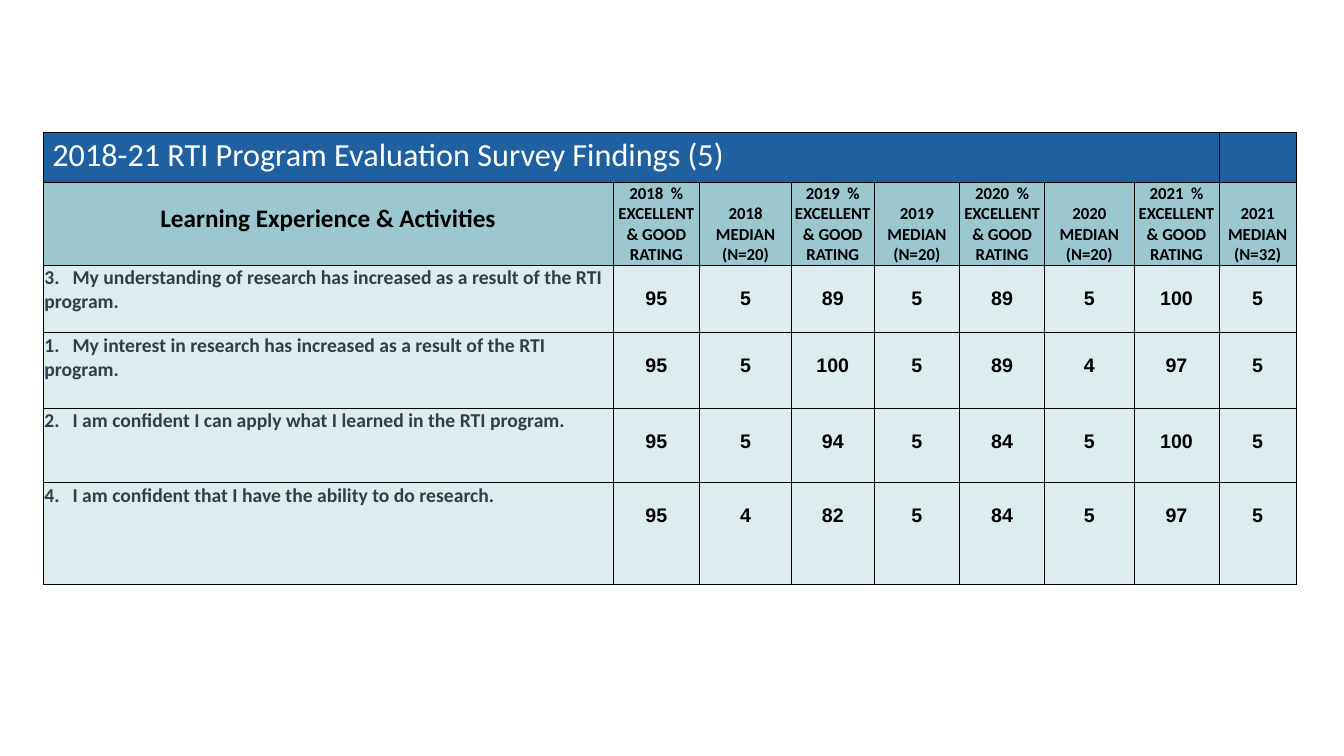
"""Build the survey findings table slide."""
from dataclasses import dataclass

from lxml.etree import SubElement
from pptx import Presentation
from pptx.dml.color import RGBColor as RGB
from pptx.enum.text import MSO_ANCHOR as ANCHOR, PP_ALIGN as ALIGN
from pptx.oxml import parse_xml
from pptx.oxml.ns import nsdecls, qn
from pptx.util import Pt

PX = 9144
COLS = [565, 86, 91, 82, 85, 84, 89, 84, 77]
ROWS = [50, 82, 67, 75, 74, 101]
TITLE = "2018-21 RTI Program Evaluation Survey Findings (5)"
SECTION = "Learning Experience & Activities"
SAMPLES = {2018: 20, 2019: 20, 2020: 20, 2021: 32}
FINDINGS = [
    ("3.\tMy understanding of research has increased as a result of the RTI program.",
     [95, 5, 89, 5, 89, 5, 100, 5]),
    ("1.\tMy interest in research has increased as a result of the RTI program.",
     [95, 5, 100, 5, 89, 4, 97, 5]),
    ("2.\tI am confident I can apply what I learned in the RTI program.",
     [95, 5, 94, 5, 84, 5, 100, 5]),
    ("4.\tI am confident that I have the ability to do research.",
     [95, 4, 82, 5, 84, 5, 97, 5]),
]


@dataclass(frozen=True)
class Theme:
    """Colours, fonts and type sizes."""
    title_fill: str = "1F60A0"
    head_fill: str = "9BC7CE"
    body_fill: str = "DDECEE"
    white: str = "FFFFFF"
    black: str = "000000"
    slate: str = "333D48"
    text_font: str = "Calibri"
    value_font: str = "Arial"
    title_size: int = 23
    section_size: int = 18
    head_size: int = 12
    body_size: int = 14
    border: float = 0.5


T = Theme()


def add_grid(slide, left, top):
    """Add an empty table with the slide's column widths and row heights."""
    frame = slide.shapes.add_table(len(ROWS), len(COLS), left * PX, top * PX,
                                   sum(COLS) * PX, sum(ROWS) * PX)
    table = frame.table
    for column, width in zip(table.columns, COLS):
        column.width = width * PX
    for row, height in zip(table.rows, ROWS):
        row.height = height * PX
    return table


def style_cell(cell, fill):
    """Fill a cell and draw its four borders."""
    cell.fill.solid()
    cell.fill.fore_color.rgb = RGB.from_string(fill)
    tc_pr = cell._tc.get_or_add_tcPr()
    for i, side in enumerate("LRTB"):
        tc_pr.insert(i, parse_xml(
            f'<a:ln{side} {nsdecls("a")} w="{Pt(T.border)}"><a:solidFill>'
            f'<a:srgbClr val="{T.black}"/></a:solidFill></a:ln{side}>'))


def write_cell(cell, text, size, color, margins, font=T.text_font, bold=True,
               align=ALIGN.CENTER, anchor=ANCHOR.TOP):
    """Write one paragraph with margins given as left, top, right, bottom."""
    left, top, right, bottom = (m * PX for m in margins)
    cell.margin_left, cell.margin_top = left, top
    cell.margin_right, cell.margin_bottom = right, bottom
    cell.vertical_anchor = anchor
    p = cell.text_frame.paragraphs[0]
    p.text = text
    p.alignment = align
    p.font.name, p.font.size, p.font.bold = font, Pt(size), bold
    p.font.color.rgb = RGB.from_string(color)
    for r in p.runs:
        r.font.name, r.font.size, r.font.bold = font, Pt(size), bold
        r.font.color.rgb = RGB.from_string(color)
    return p


def write_statement(cell, text):
    """Write a numbered statement whose number is followed by a tab stop."""
    p = write_cell(cell, text, T.body_size, T.slate, (1, 1, 1, 0),
                   align=ALIGN.LEFT)
    p_pr = p._p.get_or_add_pPr()
    tabs = parse_xml(f'<a:tabLst {nsdecls("a")}/>')
    SubElement(tabs, qn("a:tab"), pos=str(28 * PX), algn="l")
    p_pr.insert(0, tabs)


def write_headings(table):
    """Write the section heading and a rating and median heading per year."""
    write_cell(table.cell(1, 0), SECTION, T.section_size, T.black,
               (0, 0, 0, 31), anchor=ANCHOR.BOTTOM)
    headings = []
    for year, n in SAMPLES.items():
        headings += [f"{year}  % EXCELLENT & GOOD RATING",
                     f"{year} MEDIAN (N={n})"]
    for col, text in enumerate(headings, 1):
        write_cell(table.cell(1, col), text, T.head_size, T.black,
                   (0, 0, 0, 0), anchor=ANCHOR.BOTTOM)


def write_findings(table):
    """Write each statement with its ratings and medians."""
    for row, (statement, values) in enumerate(FINDINGS, 2):
        write_statement(table.cell(row, 0), statement)
        for col, value in enumerate(values, 1):
            write_cell(table.cell(row, col), str(value), T.body_size, T.black,
                       (1, 22, 1, 0), font=T.value_font)


def main():
    """Build and save the slide."""
    prs = Presentation()
    prs.slide_width, prs.slide_height = 1333 * PX, 750 * PX
    s = prs.slides.add_slide(prs.slide_layouts[6])
    table = add_grid(s, 43, 131)
    fills = [T.title_fill, T.head_fill] + [T.body_fill] * len(FINDINGS)
    for row, fill in enumerate(fills):
        for col in range(len(COLS)):
            style_cell(table.cell(row, col), fill)
    title = table.cell(0, 0)
    title.merge(table.cell(0, len(COLS) - 2))
    write_cell(title, TITLE, T.title_size, T.white, (9, 4, 9, 4),
               bold=False, align=ALIGN.LEFT)
    write_headings(table)
    write_findings(table)
    prs.save("out.pptx")


if __name__ == "__main__":
    main()
